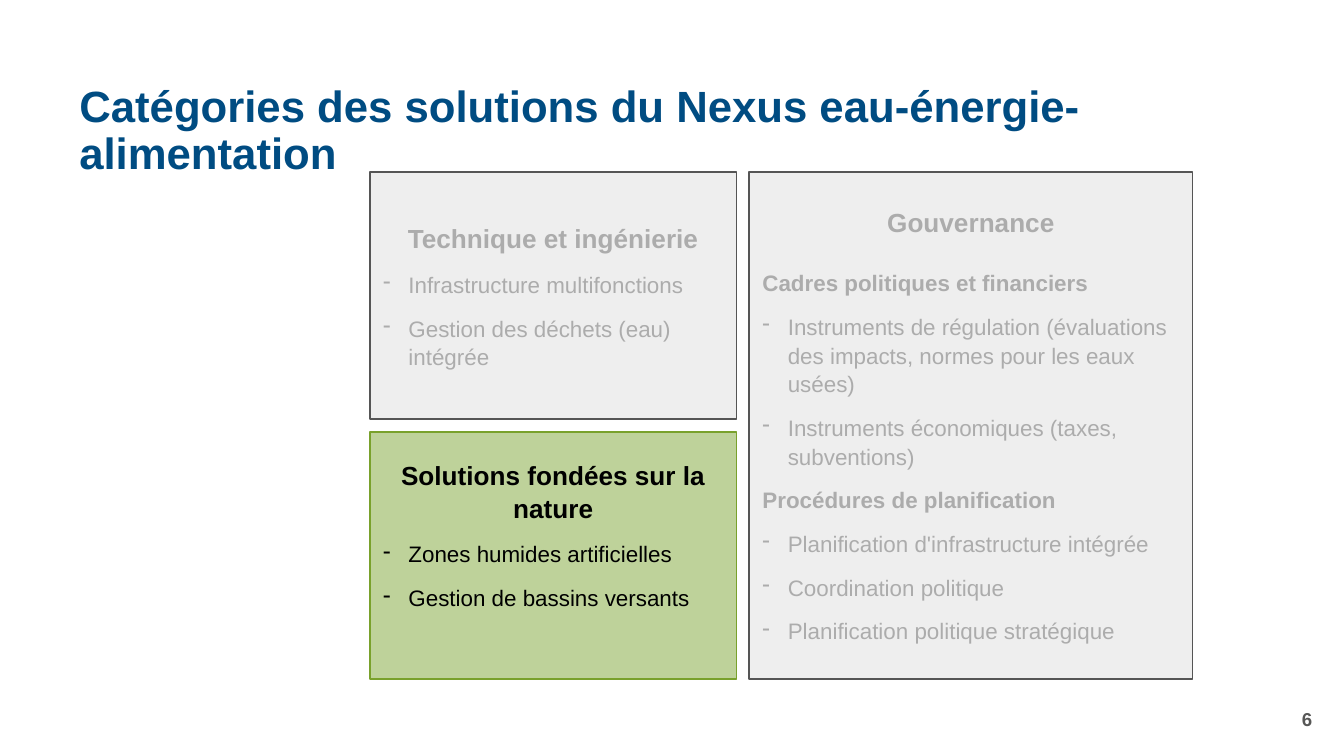
from lxml.etree import SubElement
from pptx import Presentation
from pptx.dml.color import RGBColor
from pptx.enum.shapes import MSO_SHAPE as Shape
from pptx.enum.text import MSO_ANCHOR as Anchor, PP_ALIGN as Align
from pptx.oxml.ns import qn
from pptx.util import Cm, Pt

BLUE = RGBColor(0x00, 0x4C, 0x82)
GREEN = RGBColor(0x79, 0xA1, 0x2C)
BLACK = RGBColor(0x00, 0x00, 0x00)
PALE_GREY = RGBColor(0xEE, 0xEE, 0xEE)
MUTED_GREY = RGBColor(0xAC, 0xAC, 0xAC)
BORDER_GREY = RGBColor(0x55, 0x55, 0x55)
NUMBER_GREY = RGBColor(0x57, 0x57, 0x56)


class SlideBuilder:
    font_name = "Arial"
    heading_size = 14
    body_size = 12
    indent = Cm(0.48)

    def __init__(self, slide):
        self.slide = slide

    def style(self, paragraph, size, color, bold=True, align=Align.LEFT):
        paragraph.alignment = align
        for run in paragraph.runs:
            run.font.name = self.font_name
            run.font.size = Pt(size)
            run.font.bold = bold
            run.font.color.rgb = color

    def label(self, text, left, top, width, height, size, color, align=Align.LEFT):
        box = self.slide.shapes.add_textbox(Cm(left), Cm(top), Cm(width), Cm(height))
        frame = box.text_frame
        frame.word_wrap = True
        frame.vertical_anchor = Anchor.MIDDLE
        frame.text = text
        self.style(frame.paragraphs[0], size, color, align=align)
        return frame.paragraphs[0]

    def panel(self, left, top, width, height, fill, border, alpha=None):
        shape = self.slide.shapes.add_shape(
            Shape.RECTANGLE, Cm(left), Cm(top), Cm(width), Cm(height))
        shape.shadow.inherit = False
        shape.fill.solid()
        shape.fill.fore_color.rgb = fill
        shape.line.color.rgb = border
        shape.line.width = Pt(1)
        if alpha:
            color = shape.fill._xPr.find(qn("a:solidFill"))[0]
            SubElement(color, qn("a:alpha"), val=str(alpha * 1000))
        frame = shape.text_frame
        frame.word_wrap = True
        frame.vertical_anchor = Anchor.MIDDLE
        return frame

    def heading(self, frame, text, color, line_spacing=1.07, space_after=8):
        frame.text = text
        paragraph = frame.paragraphs[0]
        paragraph.line_spacing = line_spacing
        paragraph.space_after = Pt(space_after)
        self.style(paragraph, self.heading_size, color, align=Align.CENTER)

    def body(self, frame, text, color, bullet=True):
        paragraph = frame.add_paragraph()
        paragraph.text = text
        if bullet:
            properties = paragraph._p.get_or_add_pPr()
            properties.set("marL", str(self.indent))
            properties.set("indent", str(-self.indent))
            SubElement(properties, qn("a:buChar"), char="-")
        paragraph.line_spacing = 1.07
        paragraph.space_after = Pt(8)
        self.style(paragraph, self.body_size, color, bold=not bullet)

    def bullets(self, frame, items, color):
        for item in items:
            self.body(frame, item, color)


def main():
    presentation = Presentation()
    presentation.slide_width, presentation.slide_height = Cm(25.4), Cm(14.29)
    builder = SlideBuilder(presentation.slides.add_slide(presentation.slide_layouts[6]))

    # Panel grid: two stacked panels beside one tall panel
    left, top, gap = 6.99, 3.25, 0.24
    width, height = 6.93, 4.67
    right_left, right_width = left + width + gap, 8.38
    lower_top, full_height = top + height + gap, 2 * height + gap

    # Governance
    governance = builder.panel(right_left, top, right_width, full_height,
                               PALE_GREY, BORDER_GREY)
    builder.heading(governance, "Gouvernance", MUTED_GREY, line_spacing=1, space_after=16)
    sections = {
        "Cadres politiques et financiers": [
            "Instruments de régulation (évaluations des impacts, "
            "normes pour les eaux usées)",
            "Instruments économiques (taxes, subventions)",
        ],
        "Procédures de planification": [
            "Planification d'infrastructure intégrée",
            "Coordination politique",
            "Planification politique stratégique",
        ],
    }
    for section, items in sections.items():
        builder.body(governance, section, MUTED_GREY, bullet=False)
        builder.bullets(governance, items, MUTED_GREY)

    # Title and slide number
    title = builder.label("Catégories des solutions du Nexus eau-énergie-alimentation",
                          1.25, 1.75, 23.8, 1.5, 23.4, BLUE)
    title.line_spacing = 0.9
    builder.label("6", 19.33, 13.21, 5.72, 0.76, 10, NUMBER_GREY, Align.RIGHT)

    # Engineering
    engineering = builder.panel(left, top, width, height, PALE_GREY, BORDER_GREY)
    builder.heading(engineering, "Technique et ingénierie", MUTED_GREY)
    builder.bullets(engineering, ["Infrastructure multifonctions",
                                  "Gestion des déchets (eau) intégrée"], MUTED_GREY)

    # Nature-based solutions, highlighted
    nature = builder.panel(left, lower_top, width, height, GREEN, GREEN, alpha=48)
    nature.margin_bottom = Cm(0.93)
    builder.heading(nature, "Solutions fondées sur la nature", BLACK)
    builder.bullets(nature, ["Zones humides artificielles",
                             "Gestion de bassins versants"], BLACK)

    presentation.save("out.pptx")


if __name__ == "__main__":
    main()
